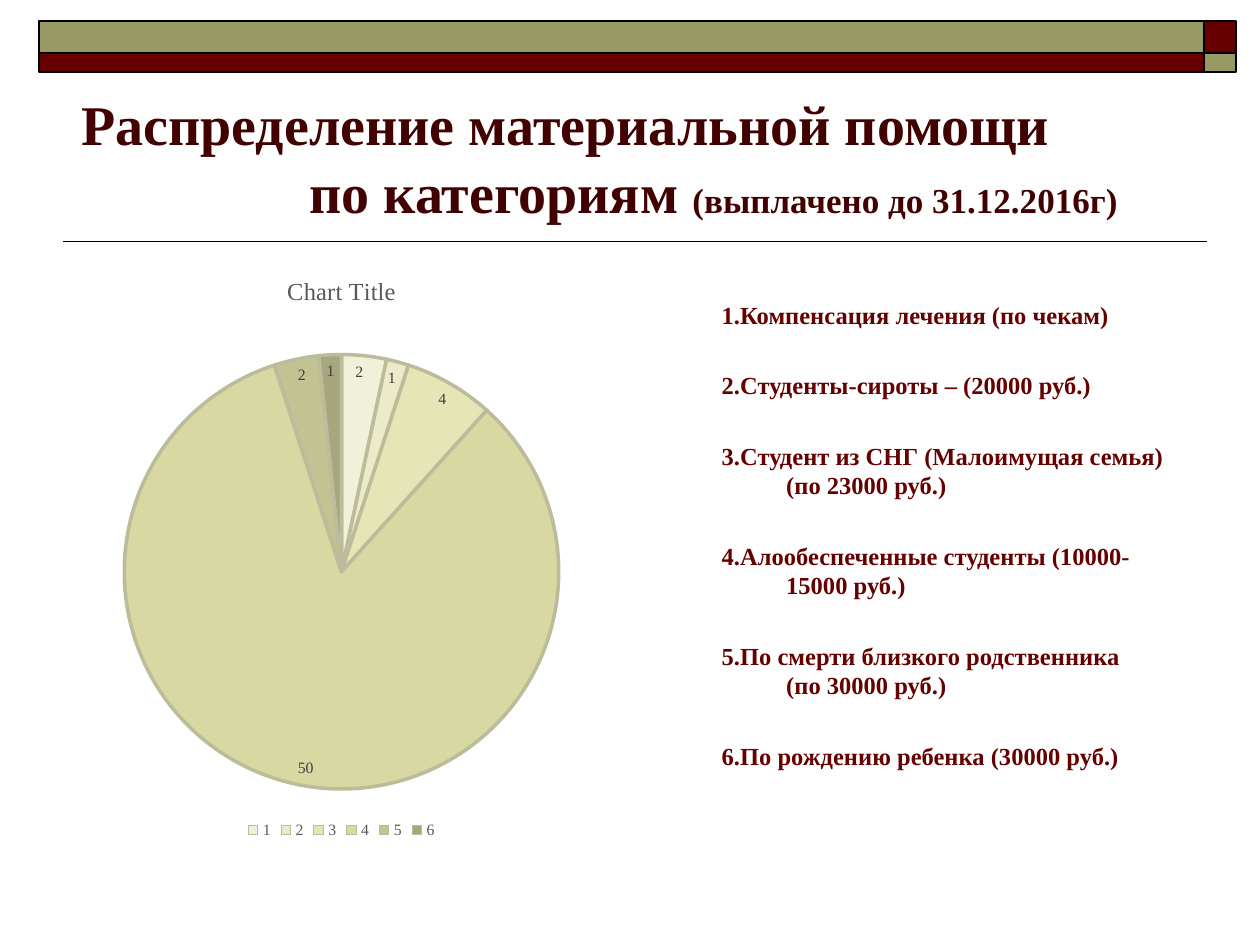
from dataclasses import dataclass

from lxml import etree
from pptx import Presentation
from pptx.chart.data import CategoryChartData
from pptx.dml.color import RGBColor
from pptx.enum.chart import XL_CHART_TYPE, XL_LABEL_POSITION, XL_LEGEND_POSITION
from pptx.enum.shapes import MSO_CONNECTOR, MSO_SHAPE
from pptx.enum.text import MSO_ANCHOR
from pptx.oxml import parse_xml
from pptx.oxml.ns import nsdecls, qn
from pptx.util import Cm, Pt

PIE = XL_CHART_TYPE.PIE
INSIDE_END = XL_LABEL_POSITION.INSIDE_END
LEGEND_BOTTOM = XL_LEGEND_POSITION.BOTTOM
STRAIGHT = MSO_CONNECTOR.STRAIGHT
RECTANGLE = MSO_SHAPE.RECTANGLE
TOP, BOTTOM = MSO_ANCHOR.TOP, MSO_ANCHOR.BOTTOM

FONT = "Times New Roman"
COLORS = {
    "olive": "999966",
    "maroon": "660000",
    "title": "420000",
    "black": "000000",
    "grey": "595959",
    "label": "404040",
    "slice_line": "BCBC9A",
}
SLICE_COLORS = ["F1F1DA", "EBEBC9", "E5E5B5", "D8D8A2", "C2C292", "A7A77E"]
PAYMENTS = [2, 1, 4, 50, 2, 1]
CATEGORIES = [
    "1.Компенсация лечения (по чекам)",
    "2.Студенты-сироты – (20000 руб.)",
    "3.Студент из СНГ (Малоимущая семья) (по 23000 руб.)",
    "4.Алообеспеченные студенты (10000-15000 руб.)",
    "5.По смерти близкого родственника\v(по 30000 руб.)",
    "6.По рождению ребенка (30000 руб.)",
]


@dataclass
class Area:
    """A place on the slide, in centimetres."""
    left: float
    top: float
    width: float
    height: float

    def lengths(self) -> tuple:
        return Cm(self.left), Cm(self.top), Cm(self.width), Cm(self.height)


@dataclass
class Band:
    area: Area
    color: str


# Header bands: a wide and a narrow column, a tall and a low row
LEFT, SPLIT, CORNER = 0.79, 24.28, 0.64
UPPER, LOWER, UPPER_HEIGHT, LOWER_HEIGHT = 0.43, 1.07, 0.64, 0.38
BANDS = [
    Band(Area(SPLIT, UPPER, CORNER, UPPER_HEIGHT), "maroon"),
    Band(Area(LEFT, UPPER, SPLIT - LEFT, UPPER_HEIGHT), "olive"),
    Band(Area(LEFT, LOWER, SPLIT - LEFT, LOWER_HEIGHT), "maroon"),
    Band(Area(SPLIT, LOWER, CORNER, LOWER_HEIGHT), "olive"),
]


def rgb(name: str) -> RGBColor:
    return RGBColor.from_string(COLORS[name])


def style_font(font, size: float, color: str, bold: bool = False) -> None:
    font.name = FONT
    font.size = Pt(size)
    font.bold = bold
    font.color.rgb = rgb(color)


def hang(para, margin: float, first_line: float) -> None:
    properties = para._p.get_or_add_pPr()
    properties.set("marL", str(Cm(margin)))
    properties.set("indent", str(Cm(first_line)))


def add_band(page, band: Band) -> None:
    shape = page.shapes.add_shape(RECTANGLE, *band.area.lengths())
    shape.shadow.inherit = False
    shape.fill.solid()
    shape.fill.fore_color.rgb = rgb(band.color)
    shape.line.color.rgb = rgb("black")
    shape.line.width = Pt(1)


def add_rule(page, left: float, right: float, top: float) -> None:
    rule = page.shapes.add_connector(STRAIGHT, Cm(right), Cm(top), Cm(left), Cm(top))
    rule.line.color.rgb = rgb("black")
    rule.line.width = Pt(1)
    etree.SubElement(rule._element.spPr, qn("a:effectLst"))


def add_text_frame(page, area: Area, anchor):
    frame = page.shapes.add_textbox(*area.lengths()).text_frame
    frame.word_wrap = True
    frame.vertical_anchor = anchor
    return frame


def add_title(page, area: Area) -> None:
    para = add_text_frame(page, area, BOTTOM).paragraphs[0]
    para.text = "Распределение материальной помощи\vпо категориям "
    hang(para, 4.72, -4.6)
    for span in para.runs:
        style_font(span.font, 32, "title", True)
    note = para.add_run()
    note.text = "(выплачено до 31.12.2016г)"
    style_font(note.font, 20, "title", True)


def add_categories(page, area: Area) -> None:
    frame = add_text_frame(page, area, TOP)
    frame.text = "\n".join(CATEGORIES)
    for number, para in enumerate(frame.paragraphs):
        hang(para, 1.3, -1.3)
        if number:
            para.space_before = Pt(23.5)
        for span in para.runs:
            style_font(span.font, 14, "maroon", True)


def place_plot(chart, x: float, y: float, width: float, height: float) -> None:
    plot_area = chart._chartSpace.chart.plotArea
    for old in plot_area.findall(qn("c:layout")):
        plot_area.remove(old)
    places = {"x": x, "y": y, "w": width, "h": height}
    values = "".join(f'<c:{key} val="{value}"/>' for key, value in places.items())
    plot_area.insert(0, parse_xml(
        f'<c:layout {nsdecls("c")}><c:manualLayout><c:layoutTarget val="inner"/>'
        f'<c:xMode val="edge"/><c:yMode val="edge"/>{values}'
        "</c:manualLayout></c:layout>"))


def add_pie(page, area: Area) -> None:
    data = CategoryChartData()
    data.categories = [str(number + 1) for number in range(len(PAYMENTS))]
    data.add_series("Series 1", PAYMENTS)
    chart = page.shapes.add_chart(PIE, *area.lengths(), data).chart
    style_font(chart.font, 10, "black")

    # Title and legend
    chart.has_title = True
    heading = chart.chart_title.text_frame
    heading.text = "Chart Title"
    style_font(heading.paragraphs[0].runs[0].font, 14, "grey")
    chart.chart_title.include_in_layout = False
    chart.has_legend = True
    chart.legend.position = LEGEND_BOTTOM
    chart.legend.include_in_layout = False
    style_font(chart.legend.font, 9, "grey")

    # Slices and their values
    plot = chart.plots[0]
    plot.vary_by_categories = True
    for number, color in enumerate(SLICE_COLORS):
        look = plot.series[0].points[number].format
        look.fill.solid()
        look.fill.fore_color.rgb = RGBColor.from_string(color)
        look.line.color.rgb = rgb("slice_line")
        look.line.width = Pt(2)
    plot.has_data_labels = True
    plot.data_labels.show_value = True
    plot.data_labels.show_percentage = False
    plot.data_labels.position = INSIDE_END
    style_font(plot.data_labels.font, 9, "label")
    place_plot(chart, 0.11, 0.17, 0.78, 0.74)


def main() -> None:
    deck = Presentation()
    deck.slide_width, deck.slide_height = Cm(25.4), Cm(19.05)
    page = deck.slides.add_slide(deck.slide_layouts[6])
    # Header
    add_rule(page, 1.27, 24.33, 4.87)
    for band in BANDS:
        add_band(page, band)
    add_title(page, Area(1.27, 1.47, 22.86, 3.18))
    # Content
    add_categories(page, Area(14.3, 5.92, 9.83, 11.1))
    add_pie(page, Area(1.27, 5.08, 11.23, 11.94))
    deck.save("out.pptx")


if __name__ == "__main__":
    main()
